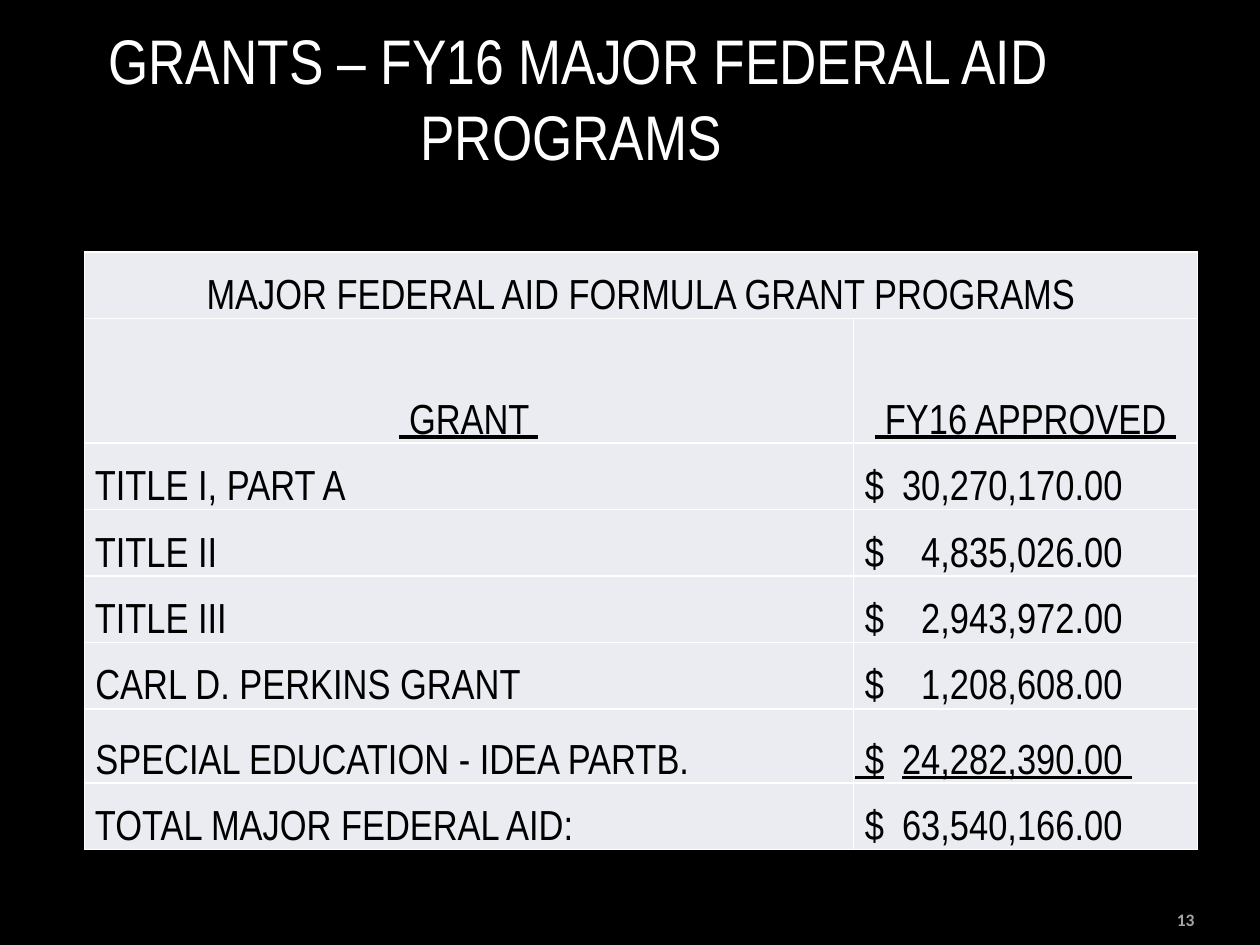
from lxml import etree
from pptx import Presentation
from pptx.dml.color import RGBColor
from pptx.enum.text import MSO_ANCHOR, PP_ALIGN
from pptx.oxml.ns import qn
from pptx.util import Cm, Pt

CENTER, RIGHT, LEFT = PP_ALIGN.CENTER, PP_ALIGN.RIGHT, PP_ALIGN.LEFT
BOTTOM, MIDDLE = MSO_ANCHOR.BOTTOM, MSO_ANCHOR.MIDDLE

COLORS = {
    "background": "000000",
    "title": "FFFFFF",
    "page number": "A6A6A6",
    "cell": "EAECF2",
    "cell text": "000000",
    "border": "FFFFFF",
}


def style_paragraph(paragraph, font_name, size, color, alignment):
    paragraph.alignment = alignment
    paragraph.font.name = font_name
    paragraph.font.size = Pt(size)
    paragraph.font.color.rgb = RGBColor.from_string(COLORS[color])


def add_border(cell):
    properties = cell._tc.get_or_add_tcPr()
    for side in ("a:lnL", "a:lnR", "a:lnT", "a:lnB"):
        line = etree.SubElement(properties, qn(side), w=str(Pt(1)))
        fill = etree.SubElement(line, qn("a:solidFill"))
        etree.SubElement(fill, qn("a:srgbClr"), val=COLORS["border"])


presentation = Presentation()
presentation.slide_width, presentation.slide_height = Cm(25.4), Cm(19.05)
slide = presentation.slides.add_slide(presentation.slide_layouts[6])
slide.background.fill.solid()
slide.background.fill.fore_color.rgb = RGBColor.from_string(COLORS["background"])

# Title and page number
texts = [
    ("GRANTS – FY16 MAJOR FEDERAL AID PROGRAMS ", (0.99, 0.64, 21.34, 2.97),
     "Arial Narrow", 36, "title", CENTER, BOTTOM),
    ("13", (21.89, 18.19, 2.44, 0.69),
     "Calibri", 10, "page number", RIGHT, MIDDLE),
]
for text, box, font_name, size, color, alignment, anchor in texts:
    shape = slide.shapes.add_textbox(*[Cm(length) for length in box])
    frame = shape.text_frame
    frame.word_wrap = True
    frame.vertical_anchor = anchor
    frame.text = text
    paragraph = frame.paragraphs[0]
    style_paragraph(paragraph, font_name, size, color, alignment)
    paragraph.font.bold = color == "page number"

# Grant table: amounts line up on a decimal tab
grants = [
    ("TITLE I, PART A", "30,270,170.00"),
    ("TITLE II", "4,835,026.00"),
    ("TITLE III", "2,943,972.00"),
    ("CARL D. PERKINS GRANT", "1,208,608.00"),
    ("SPECIAL EDUCATION - IDEA PARTB.", "24,282,390.00"),
    ("TOTAL MAJOR FEDERAL AID:", "63,540,166.00"),
]
rows = [
    (" MAJOR FEDERAL AID FORMULA GRANT PROGRAMS ", ""),
    (" GRANT ", " FY16 APPROVED "),
] + [(f" {grant}", f" $\t{amount} ") for grant, amount in grants]
row_heights = [1.34, 2.51, 1.34, 1.34, 1.34, 1.34, 1.5, 1.34]
column_widths = [15.51, 6.93]
underlined = {(1, 0), (1, 1), (6, 1)}

table = slide.shapes.add_table(
    len(rows), 2, Cm(1.7), Cm(5.08), Cm(sum(column_widths)), Cm(sum(row_heights))
).table
table.first_row = table.horz_banding = False
for column, width in zip(table.columns, column_widths):
    column.width = Cm(width)
for row, height in zip(table.rows, row_heights):
    row.height = Cm(height)
table.cell(0, 0).merge(table.cell(0, 1))

for row_index, row_texts in enumerate(rows):
    for column_index, text in enumerate(row_texts):
        cell = table.cell(row_index, column_index)
        add_border(cell)
        cell.fill.solid()
        cell.fill.fore_color.rgb = RGBColor.from_string(COLORS["cell"])
        cell.vertical_anchor = BOTTOM
        cell.margin_left = cell.margin_right = cell.margin_top = Cm(0.03)
        cell.margin_bottom = 0
        if not text:
            continue
        cell.text = text
        paragraph = cell.text_frame.paragraphs[0]
        style_paragraph(paragraph, "Arial Narrow", 24, "cell text",
                        CENTER if row_index < 2 else LEFT)
        paragraph.font.underline = (row_index, column_index) in underlined
        if "\t" in text:
            properties = paragraph._p.get_or_add_pPr()
            tab_list = etree.Element(qn("a:tabLst"))
            etree.SubElement(tab_list, qn("a:tab"), pos=str(Cm(4.42)), algn="dec")
            properties.insert(0, tab_list)

presentation.save("out.pptx")
